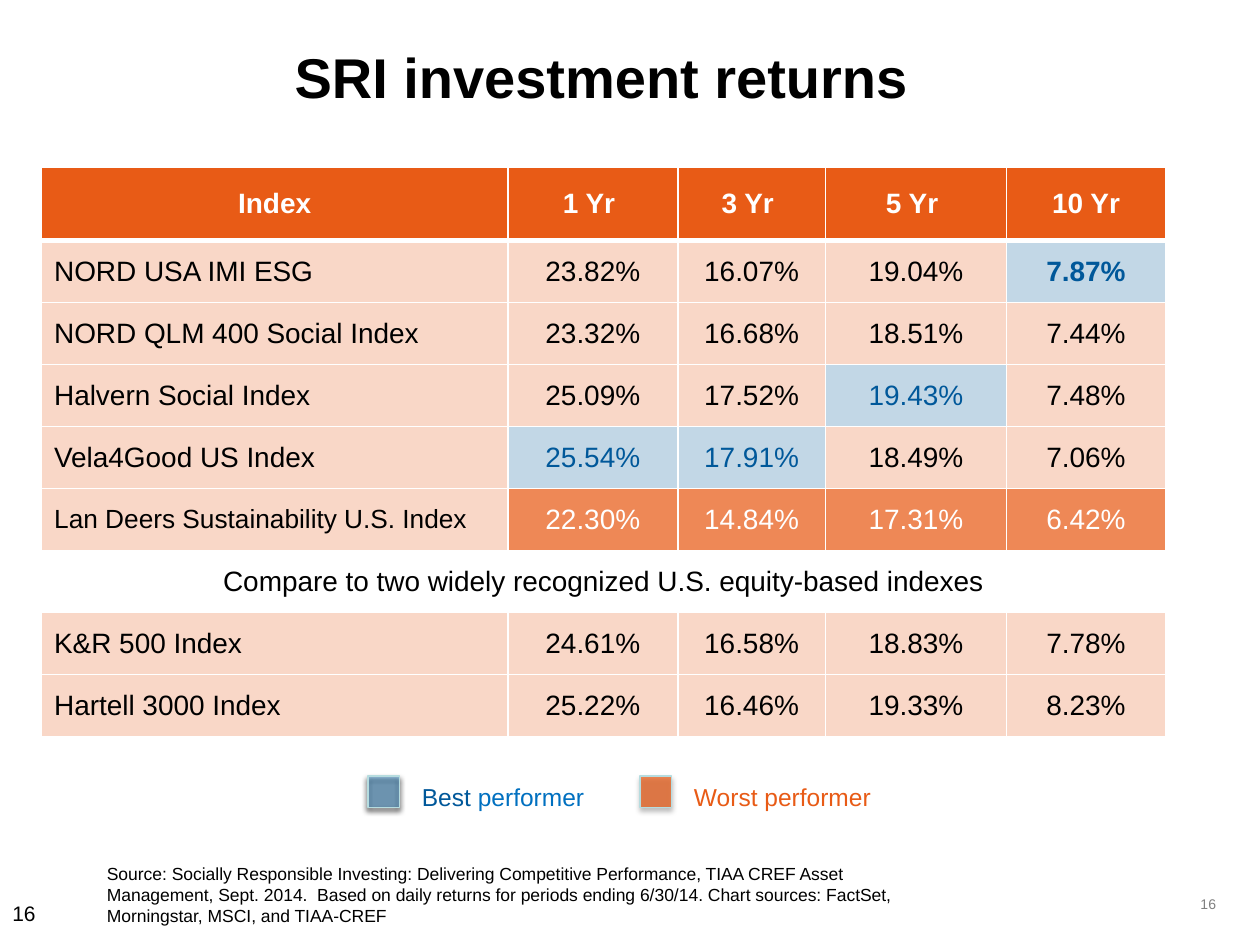
from pptx import Presentation
from pptx.dml.color import RGBColor
from pptx.enum.shapes import MSO_SHAPE as Shape
from pptx.enum.text import MSO_ANCHOR as Anchor, MSO_AUTO_SIZE as AutoSize, PP_ALIGN as Align
from pptx.oxml import parse_xml
from pptx.oxml.ns import nsdecls, qn
from pptx.oxml.xmlchemy import OxmlElement
from pptx.util import Inches, Pt

BLACK = RGBColor(0x00, 0x00, 0x00)
WHITE = RGBColor(0xFF, 0xFF, 0xFF)
GRAY = RGBColor(0x80, 0x80, 0x80)
ORANGE = RGBColor(0xE8, 0x5B, 0x16)
NAVY = RGBColor(0x00, 0x58, 0x9A)
BLUE = RGBColor(0x00, 0x70, 0xC0)
PALE_TEAL = RGBColor(0xB6, 0xDC, 0xDF)

HEADER = ["Index", "1 Yr ", "3 Yr ", "5 Yr ", "10 Yr"]
RETURNS = [
    ["NORD USA IMI ESG", "23.82%", "16.07%", "19.04%", "7.87%"],
    ["NORD QLM 400 Social Index", "23.32%", "16.68%", "18.51%", "7.44%"],
    ["Halvern Social Index", "25.09%", "17.52%", "19.43%", "7.48%"],
    ["Vela4Good US Index", "25.54%", "17.91%", "18.49%", "7.06%"],
    ["Lan Deers Sustainability U.S. Index", "22.30%", "14.84%", "17.31%", "6.42%"],
    ["Compare to two widely recognized U.S. equity-based indexes"],
    ["K&R 500 Index", "24.61%", "16.58%", "18.83%", "7.78%"],
    ["Hartell 3000 Index", "25.22%", "16.46%", "19.33%", "8.23%"],
]
COL_WIDTHS = [3.7, 1.35, 1.17, 1.44, 1.26]
TABLE_HEIGHT, HEADER_HEIGHT = 4.52, 0.58
BEST = {(1, 4), (3, 3), (4, 1), (4, 2)}
WORST_ROW = 5
SOURCE = (
    "Source: Socially Responsible Investing: Delivering Competitive Performance, "
    "TIAA CREF Asset Management, Sept. 2014.  Based on daily returns for periods "
    "ending 6/30/14. Chart sources: FactSet, Morningstar, MSCI, and TIAA-CREF"
)


class Deck:
    """Holds the text style and the current slide, and draws its elements."""

    def __init__(self, prs, font="Arial"):
        self.font = font
        self.s = prs.slides.add_slide(prs.slide_layouts[5])

    def add_runs(self, tf, runs, align=Align.LEFT, **fmt):
        p = tf.paragraphs[0]
        p.alignment = align
        for text, color in runs:
            r = p.add_run()
            r.text = text
            r.font.color.rgb = color
            for name, value in {"name": self.font, "bold": False, **fmt}.items():
                setattr(r.font, name, value)

    def paint(self, fill, pr, color, alpha):
        fill.solid()
        fill.fore_color.rgb = color
        if alpha < 100:
            a = OxmlElement("a:alpha")
            a.set("val", str(alpha * 1000))
            pr.find(qn("a:solidFill"))[0].append(a)

    def title(self, text, x, y, w, h):
        sp = self.s.shapes.title
        box = {"left": x, "top": y, "width": w, "height": h}
        for name, value in box.items():
            setattr(sp, name, Inches(value))
        tf = sp.text_frame
        tf.vertical_anchor = Anchor.TOP
        tf.margin_top = Inches(0.09)
        self.add_runs(tf, [(text, BLACK)], Align.CENTER, size=Pt(32), bold=True)

    def text(self, runs, x, y, w, h, size, align=Align.LEFT, **frame):
        sp = self.s.shapes.add_textbox(Inches(x), Inches(y), Inches(w), Inches(h))
        tf = sp.text_frame
        for name, value in {"word_wrap": True, **frame}.items():
            setattr(tf, name, value)
        self.add_runs(tf, runs, align, size=Pt(size))

    def borders(self, tc_pr, top, bottom):
        for side, width in {"L": 1, "R": 1, "T": top, "B": bottom}.items():
            tc_pr.append(parse_xml(
                f'<a:ln{side} {nsdecls("a")} w="{Pt(width)}"><a:solidFill>'
                f'<a:srgbClr val="{WHITE}"/></a:solidFill></a:ln{side}>'))

    def cell(self, cell, text, row, col, merged):
        color, fill, alpha, bold, size = BLACK, ORANGE, 24, False, 16
        if row == 0:
            color, alpha, bold = WHITE, 100, True
        elif (row, col) in BEST:
            color, fill, bold = NAVY, NAVY, row == 1
        elif row == WORST_ROW and col:
            color, alpha = WHITE, 72
        elif row == WORST_ROW:
            size = 15
        tc_pr = cell._tc.get_or_add_tcPr()
        self.borders(tc_pr, 3 if row == 1 else 1, 3 if row == 0 else 1)
        if merged:
            cell.fill.background()
        else:
            self.paint(cell.fill, tc_pr, fill, alpha)
        cell.vertical_anchor = Anchor.MIDDLE
        align = Align.CENTER if row == 0 or col or merged else Align.LEFT
        self.add_runs(cell.text_frame, [(text, color)], align, size=Pt(size), bold=bold)

    def table(self, rows, x, y):
        table = self.s.shapes.add_table(
            len(rows), len(COL_WIDTHS), Inches(x), Inches(y),
            Inches(sum(COL_WIDTHS)), Inches(TABLE_HEIGHT)).table
        for column, width in zip(table.columns, COL_WIDTHS):
            column.width = Inches(width)
        body_height = (TABLE_HEIGHT - HEADER_HEIGHT) / (len(rows) - 1)
        for i, values in enumerate(rows):
            table.rows[i].height = Inches(body_height if i else HEADER_HEIGHT)
            merged = len(values) == 1
            if merged:
                table.cell(i, 0).merge(table.cell(i, len(COL_WIDTHS) - 1))
            for j, value in enumerate(values):
                self.cell(table.cell(i, j), value, i, j, merged)

    def swatch(self, x, y, size, color, alpha):
        sp = self.s.shapes.add_shape(
            Shape.RECTANGLE, Inches(x), Inches(y), Inches(size), Inches(size))
        self.paint(sp.fill, sp._element.spPr, color, alpha)
        sp.line.color.rgb = PALE_TEAL
        sp.line.width = Pt(0.75)
        sp.shadow.inherit = False
        sp._element.spPr.find(qn("a:effectLst")).append(parse_xml(
            f'<a:outerShdw {nsdecls("a")} blurRad="{Pt(3.1)}" dist="{Pt(1.8)}" '
            'dir="5400000" rotWithShape="0"><a:srgbClr val="000000">'
            '<a:alpha val="35000"/></a:srgbClr></a:outerShdw>'))

    def legend(self, x, y, color, alpha, runs):
        self.swatch(x, y, 0.25, color, alpha)
        self.text(runs, x + 0.33, y, 2.67, 0.34, 14, auto_size=AutoSize.SHAPE_TO_FIT_TEXT)


def main():
    prs = Presentation()
    prs.slide_width, prs.slide_height = Inches(10), Inches(7.5)
    deck = Deck(prs)
    deck.text([("16", GRAY)], 9.25, 7, 0.5, 0.35, 8, Align.RIGHT,
              vertical_anchor=Anchor.MIDDLE, margin_left=0)
    deck.title("SRI investment returns ", 0, 0.25, 9.67, 0.78)
    deck.text([("16", BLACK)], 0, 7.1, 0.67, 0.4, 12)
    deck.table([HEADER] + RETURNS, 0.33, 1.33)
    deck.text([(SOURCE, BLACK)], 0.75, 6.8, 6.67, 0.61, 10,
              auto_size=AutoSize.SHAPE_TO_FIT_TEXT)
    deck.legend(2.92, 6.16, BLUE, 35, [("Best", NAVY), (" performer", BLUE)])
    deck.legend(5.08, 6.16, ORANGE, 72, [("Worst performer", ORANGE)])
    prs.save("out.pptx")


if __name__ == "__main__":
    main()
